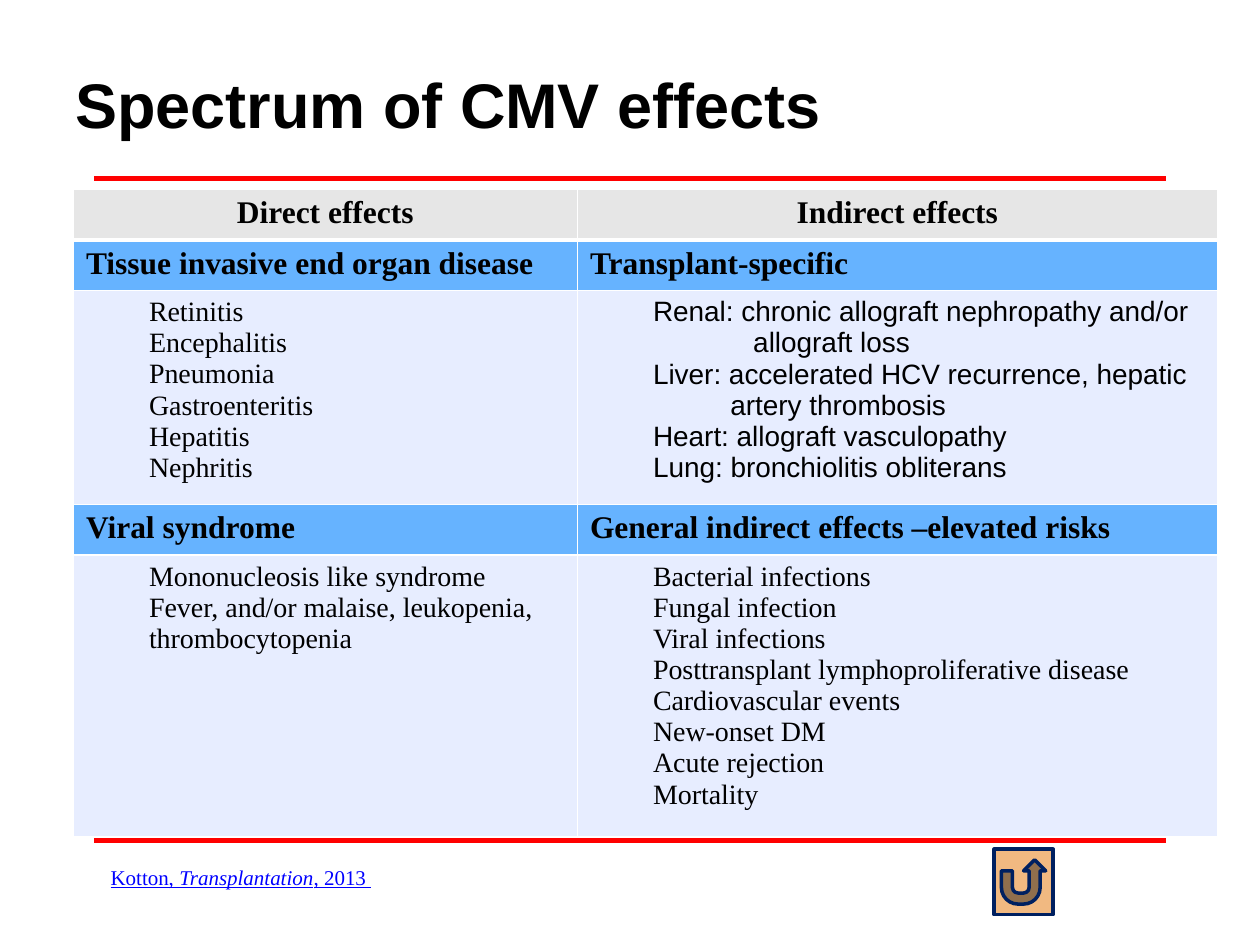
from dataclasses import dataclass

import pptx
import pptx.dml.color
import pptx.enum.shapes
import pptx.enum.text
import pptx.oxml
import pptx.oxml.ns
import pptx.util

Cm = pptx.util.Cm
Pt = pptx.util.Pt
RGB = pptx.dml.color.RGBColor.from_string
ALIGN = pptx.enum.text.PP_ALIGN
ANCHOR = pptx.enum.text.MSO_ANCHOR
SHAPE = pptx.enum.shapes.MSO_SHAPE


@dataclass(frozen=True)
class Theme:
    sans: str = "Arial"
    serif: str = "Times New Roman"
    title_size: int = 36
    heading_size: int = 18
    item_size: int = 16
    source_size: int = 12
    text: str = "000000"
    link: str = "0000FF"
    rule: str = "FF0000"
    border: str = "FFFFFF"
    header: str = "E6E6E6"
    section: str = "66B3FF"
    body: str = "E7EDFF"
    button: str = "F1B981"
    button_line: str = "002060"


T = Theme()
TITLE = dict(name=T.sans, size=Pt(T.title_size), bold=True)
HEADING = dict(name=T.serif, size=Pt(T.heading_size), bold=True)
ITEM = dict(name=T.serif, size=Pt(T.item_size), bold=False)
SANS_ITEM = dict(ITEM, name=T.sans)
SOURCE = dict(name=T.serif, size=Pt(T.source_size), underline=True)

INDENT = 1.27
COLUMNS = [10.16, 12.9]
ROWS = [0.95, 0.95, 4.04, 0.95, 5.27]

HEADER = ["Direct effects", "Indirect effects"]
ORGAN_HEADINGS = ["Tissue invasive end organ disease", "Transplant-specific"]
ORGANS = ["Retinitis", "Encephalitis", "Pneumonia", "Gastroenteritis",
          "Hepatitis", "Nephritis"]
# A pair gives a line that continues the one above, and its extra indent in cm.
TRANSPLANTS = ["Renal: chronic allograft nephropathy and/or",
               ("allograft loss", 2.02),
               "Liver: accelerated HCV recurrence, hepatic",
               ("artery thrombosis", 1.56),
               "Heart: allograft vasculopathy",
               "Lung: bronchiolitis obliterans"]
GENERAL_HEADINGS = ["Viral syndrome", "General indirect effects –elevated risks"]
SYNDROMES = ["Mononucleosis like syndrome",
             "Fever, and/or malaise, leukopenia, thrombocytopenia"]
RISKS = ["Bacterial infections", "Fungal infection", "Viral infections",
         "Posttransplant lymphoproliferative disease", "Cardiovascular events",
         "New-onset DM", "Acute rejection", "Mortality"]


def add_run(p, text, style, color=T.text):
    r = p.add_run()
    r.text = text
    for name, value in style.items():
        setattr(r.font, name, value)
    r.font.color.rgb = RGB(color)


def add_text(slide, box, runs, color, anchor):
    """Add a one-paragraph text box from (text, style) runs."""
    tf = slide.shapes.add_textbox(*map(Cm, box)).text_frame
    tf.word_wrap = True
    tf.vertical_anchor = anchor
    for text, style in runs:
        add_run(tf.paragraphs[0], text, style, color)


def add_rule(slide, y):
    line = slide.shapes.add_connector(
        pptx.enum.shapes.MSO_CONNECTOR.STRAIGHT, Cm(1.9), Cm(y), Cm(23.5), Cm(y))
    line.line.color.rgb = RGB(T.rule)
    line.line.width = Pt(3)
    line._element.spPr.append(pptx.oxml.parse_xml(
        f'<a:effectLst {pptx.oxml.ns.nsdecls("a")}/>'))


def format_cell(cell, fill, top=1, bottom=1):
    """Fill the cell and draw its borders; top and bottom are in points."""
    tcPr = cell._tc.get_or_add_tcPr()
    for side, width in dict(L=1, R=1, T=top, B=bottom).items():
        tcPr.append(pptx.oxml.parse_xml(
            f'<a:ln{side} {pptx.oxml.ns.nsdecls("a")} w="{Pt(width)}">'
            f'<a:solidFill><a:srgbClr val="{T.border}"/></a:solidFill>'
            f'</a:ln{side}>'))
    cell.fill.solid()
    cell.fill.fore_color.rgb = RGB(fill)


def fill_headings(table, row, texts, fill, align=ALIGN.LEFT, **borders):
    for cell, text in zip(table.rows[row].cells, texts):
        p = cell.text_frame.paragraphs[0]
        p.alignment = align
        add_run(p, text, HEADING)
        format_cell(cell, fill, **borders)


def fill_items(cell, items, style=ITEM):
    tf = cell.text_frame
    for i, item in enumerate(items):
        text, extra = item if isinstance(item, tuple) else (item, 0)
        p = tf.add_paragraph() if i else tf.paragraphs[0]
        pPr = p._p.get_or_add_pPr()
        pPr.set("marL", str(Cm(INDENT + extra)))
        pPr.set("indent", "0")
        add_run(p, text, style)
    format_cell(cell, T.body)


def add_effects_table(slide):
    table = slide.shapes.add_table(
        len(ROWS), len(COLUMNS), Cm(1.48), Cm(3.82),
        Cm(sum(COLUMNS)), Cm(sum(ROWS))).table
    for column, width in zip(table.columns, COLUMNS):
        column.width = Cm(width)
    for row, height in zip(table.rows, ROWS):
        row.height = Cm(height)
    fill_headings(table, 0, HEADER, T.header, ALIGN.CENTER, bottom=3)
    fill_headings(table, 1, ORGAN_HEADINGS, T.section, top=3)
    fill_items(table.cell(2, 0), ORGANS)
    fill_items(table.cell(2, 1), TRANSPLANTS, SANS_ITEM)
    fill_headings(table, 3, GENERAL_HEADINGS, T.section)
    fill_items(table.cell(4, 0), SYNDROMES)
    fill_items(table.cell(4, 1), RISKS)


def add_return_button(slide):
    sp = slide.shapes.add_shape(SHAPE.ACTION_BUTTON_RETURN,
                                Cm(20.04), Cm(17.12), Cm(1.19), Cm(1.32))
    sp.shadow.inherit = False
    sp.fill.solid()
    sp.fill.fore_color.rgb = RGB(T.button)
    sp.line.color.rgb = RGB(T.button_line)
    sp.line.width = Pt(2)


def main():
    prs = pptx.Presentation()
    prs.slide_width, prs.slide_height = Cm(25.4), Cm(19.05)
    slide = prs.slides.add_slide(prs.slide_layouts[6])
    for y in (3.6, 16.94):
        add_rule(slide, y)
    add_text(slide, (1.27, 0.76, 22.86, 2.21),
             [("Spectrum of CMV effects", TITLE)], T.text, ANCHOR.BOTTOM)
    add_effects_table(slide)
    add_return_button(slide)
    add_text(slide, (1.98, 17.3, 5.92, 0.76),
             [("Kotton, ", SOURCE),
              ("Transplantation", dict(SOURCE, italic=True)),
              (", 2013 ", SOURCE)], T.link, ANCHOR.TOP)
    prs.save("out.pptx")


if __name__ == "__main__":
    main()
